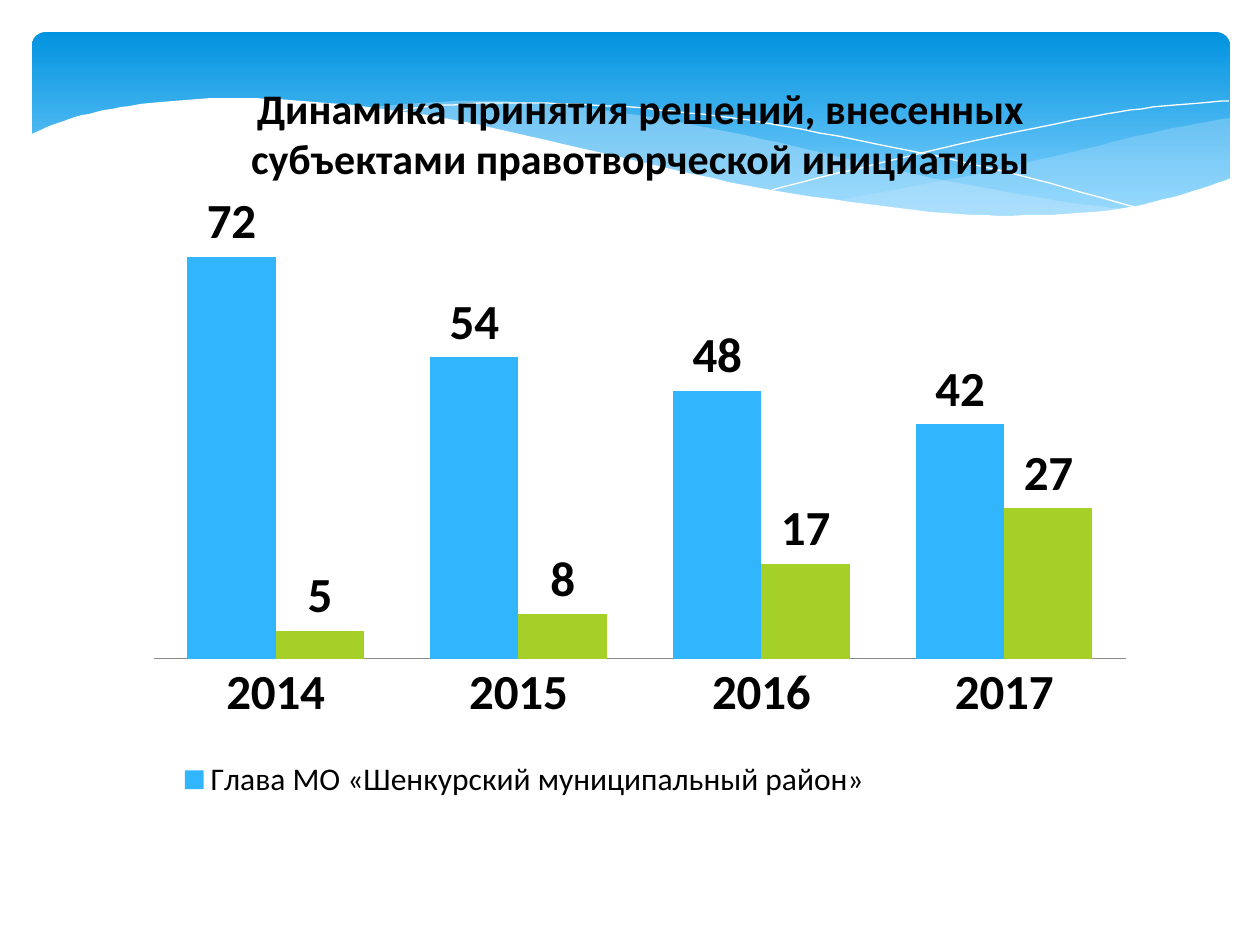
from dataclasses import dataclass

from lxml import etree
from pptx import Presentation
from pptx.chart.data import CategoryChartData
from pptx.dml.color import RGBColor
from pptx.enum.chart import XL_CHART_TYPE, XL_LABEL_POSITION, XL_LEGEND_POSITION, XL_TICK_MARK
from pptx.enum.shapes import MSO_SHAPE
from pptx.enum.text import MSO_ANCHOR, PP_ALIGN
from pptx.oxml.ns import qn
from pptx.util import Emu, Pt

PX = 914400 // 126
COLUMNS = XL_CHART_TYPE.COLUMN_CLUSTERED
LABEL_OUTSIDE = XL_LABEL_POSITION.OUTSIDE_END
LEGEND_BOTTOM = XL_LEGEND_POSITION.BOTTOM
NO_TICK = XL_TICK_MARK.NONE
ROUNDED = MSO_SHAPE.ROUNDED_RECTANGLE
MIDDLE = MSO_ANCHOR.MIDDLE
CENTER = PP_ALIGN.CENTER

FONT = "Calibri"
BLACK = "000000"
WHITE = "FFFFFF"
PALE_BLUE = "C6E7FC"
Point = tuple[float, float]


@dataclass
class Wave:
    """Smooth edges joined by straight lines; without a fill it is a white hairline."""
    edges: list[list[Point]]
    fill: str | None = None
    opacity: int = 100


@dataclass
class Series:
    values: list[int]
    color: str
    name: str = ""


WAVES = [
    Wave([[(1230, 118), (1160, 131), (1085, 149), (982, 173), (919, 185), (833, 202)],
          [(833, 202), (906, 210), (984, 217), (1052, 217), (1120, 209), (1178, 197),
           (1230, 178)]], PALE_BLUE, 29),
    Wave([[(1125, 210), (1017, 194), (890, 169), (793, 146), (699, 126), (616, 112),
           (529, 103), (455, 101), (360, 108)],
          [(360, 108), (456, 122), (566, 146), (668, 170), (757, 189), (857, 205),
           (942, 214), (1031, 218), (1092, 214), (1125, 210)]], PALE_BLUE, 40),
    Wave([[(389, 113), (433, 106), (505, 103), (591, 105), (672, 111), (766, 123),
           (876, 144), (1002, 171), (1143, 209)]]),
    Wave([[(772, 190), (876, 164), (978, 140), (1091, 117), (1164, 106), (1229, 101)]]),
    Wave([[(1231, 178), (1184, 194), (1118, 209), (1037, 215), (959, 214), (867, 204),
           (760, 188), (667, 168), (563, 144), (460, 121), (368, 107), (290, 100),
           (223, 98), (150, 103), (96, 112), (58, 123), (29, 135)],
          [(29, 282), (1231, 282)]], WHITE),
]
YEARS = ["2014", "2015", "2016", "2017"]
SERIES = [
    Series([72, 54, 48, 42], "31B6FD", "Глава МО «Шенкурский муниципальный район»"),
    Series([5, 8, 17, 27], "A5D028"),
]
TITLE = "Динамика принятия решений, внесенных субъектами правотворческой инициативы"


def px(*lengths: int) -> list[Emu]:
    return [Emu(length * PX) for length in lengths]


def rgb(color: str) -> RGBColor:
    return RGBColor.from_string(color)


def set_font(font, size: int, bold: bool = False) -> None:
    font.name, font.size, font.bold = FONT, Pt(size), bold
    font.color.rgb = rgb(BLACK)


def smooth(knots: list[Point], steps: int = 6) -> list[Point]:
    """Return points of a Catmull-Rom curve through the knots."""
    padded = [knots[0], *knots, knots[-1]]
    points = [knots[0]]
    for a, b, c, d in zip(padded, padded[1:], padded[2:], padded[3:]):
        for t in (step / steps for step in range(1, steps + 1)):
            points.append(tuple(
                (2 * q + (r - p) * t + (2 * p - 5 * q + 4 * r - s) * t ** 2
                 + (3 * q - p - 3 * r + s) * t ** 3) / 2
                for p, q, r, s in zip(a, b, c, d)))
    return points


def draw_banner(page) -> None:
    banner = page.shapes.add_shape(ROUNDED, *px(32, 32, 1198, 197))
    banner.shadow.inherit = False
    banner.adjustments[0] = 0.07
    banner.line.fill.background()
    banner.fill.gradient()
    banner.fill.gradient_angle = 270
    for stop, position, color in zip(banner.fill.gradient_stops, (0, 0.9), ("0293E0", "83D3FE")):
        stop.position, stop.color.rgb = position, rgb(color)


def draw_wave(page, wave: Wave) -> None:
    points = [point for edge in wave.edges for point in smooth(edge)]
    builder = page.shapes.build_freeform(*points[0], scale=PX)
    builder.add_line_segments(points[1:], close=wave.fill is not None)
    shape = builder.convert_to_shape()
    shape.shadow.inherit = False
    if wave.fill is None:
        shape.fill.background()
        shape.line.color.rgb = rgb(WHITE)
        shape.line.width = Pt(0)
        return
    shape.line.fill.background()
    shape.fill.solid()
    shape.fill.fore_color.rgb = rgb(wave.fill)
    if wave.opacity < 100:
        color = shape.fill._xPr.find(".//" + qn("a:srgbClr"))
        etree.SubElement(color, qn("a:alpha"), val=str(wave.opacity * 1000))


def make_layout(**settings: str | float):
    layout = etree.Element(qn("c:layout"))
    manual = etree.SubElement(layout, qn("c:manualLayout"))
    for name, value in settings.items():
        etree.SubElement(manual, qn(f"c:{name}"), val=str(value))
    return layout


def place_plot(chart) -> None:
    area = chart._chartSpace.find(".//" + qn("c:plotArea"))
    for old in area.findall(qn("c:layout")):
        area.remove(old)
    area.insert(0, make_layout(layoutTarget="inner", xMode="edge", yMode="edge",
                               x=0.02, y=0.03, w=0.96, h=0.7))


def add_legend(chart) -> None:
    """Add a legend that lists the named series only."""
    chart.has_legend = True
    legend = chart.legend
    legend.position = LEGEND_BOTTOM
    legend.include_in_layout = False
    set_font(legend.font, 18)
    element = legend._element
    for old in element.findall(qn("c:layout")):
        element.remove(old)
    last = element.find(qn("c:legendPos"))
    for index, series in enumerate(SERIES):
        if not series.name:
            entry = etree.Element(qn("c:legendEntry"))
            etree.SubElement(entry, qn("c:idx"), val=str(index))
            etree.SubElement(entry, qn("c:delete"), val="1")
            last.addnext(entry)
            last = entry
    last.addnext(make_layout(xMode="edge", yMode="edge", x=0.04, y=0.88))


def draw_chart(page) -> None:
    data = CategoryChartData()
    data.categories = YEARS
    for series in SERIES:
        data.add_series(series.name, series.values)
    chart = page.shapes.add_chart(COLUMNS, *px(134, 193, 1012, 638), data).chart
    chart.has_title = False
    set_font(chart.font, 18)
    plot = chart.plots[0]
    plot.gap_width, plot.overlap, plot.vary_by_categories = 75, 0, False
    for bars, series in zip(plot.series, SERIES):
        bars.format.fill.solid()
        bars.format.fill.fore_color.rgb = rgb(series.color)
        labels = bars.data_labels
        labels.show_value = True
        labels.position = LABEL_OUTSIDE
        set_font(labels.font, 28, True)
    years = chart.category_axis
    years.major_tick_mark = years.minor_tick_mark = NO_TICK
    years.format.line.color.rgb = rgb("898989")
    set_font(years.tick_labels.font, 28, True)
    values = chart.value_axis
    values.minimum_scale, values.maximum_scale = 0, 80
    values.has_major_gridlines = values.visible = False
    place_plot(chart)
    add_legend(chart)


def draw_title(page) -> None:
    frame = page.shapes.add_textbox(*px(154, 75, 973, 115)).text_frame
    frame.word_wrap = True
    frame.vertical_anchor = MIDDLE
    para = frame.paragraphs[0]
    para.text, para.alignment = TITLE, CENTER
    set_font(para.font, 24, True)


def main() -> None:
    deck = Presentation()
    deck.slide_width, deck.slide_height = px(1260, 945)
    page = deck.slides.add_slide(deck.slide_layouts[6])
    draw_banner(page)
    for wave in WAVES:
        draw_wave(page, wave)
    draw_chart(page)
    draw_title(page)
    deck.save("out.pptx")


if __name__ == "__main__":
    main()
